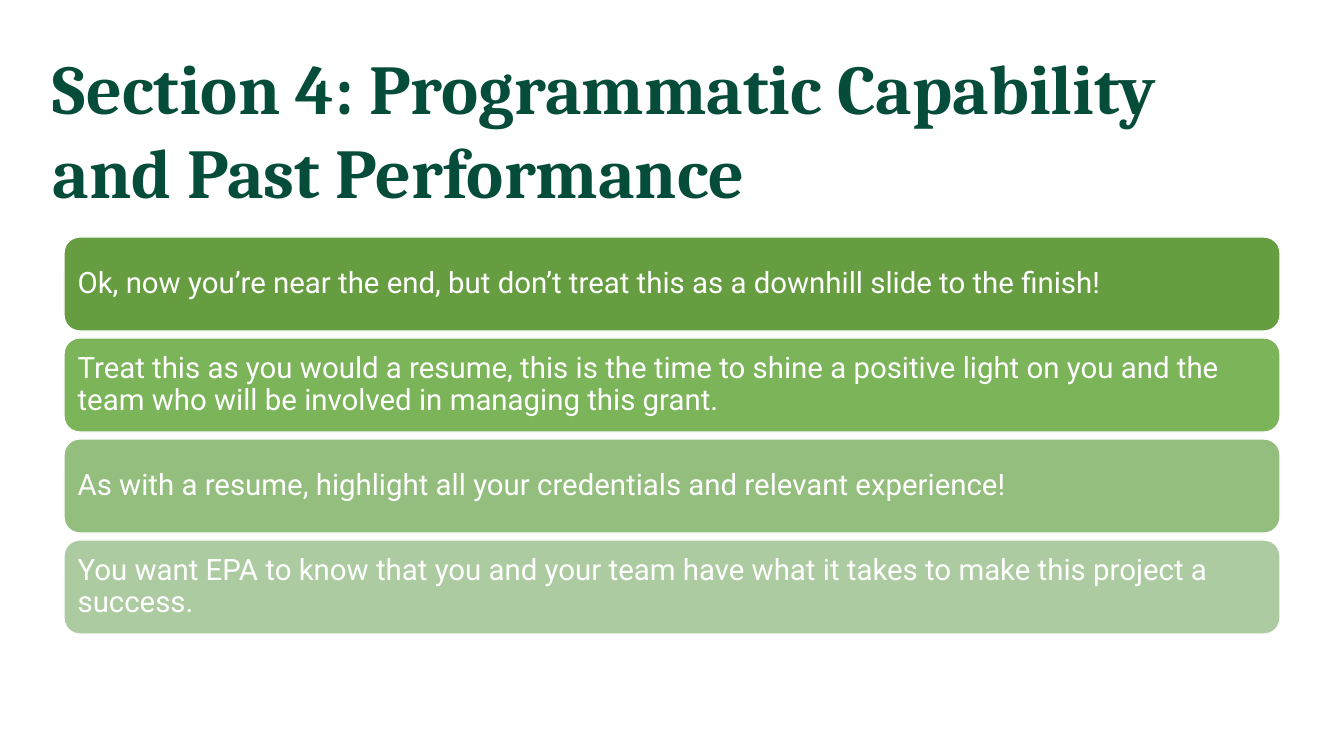
from pptx import Presentation
from pptx.dml.color import RGBColor as RGB
from pptx.enum.shapes import MSO_SHAPE as Shape
from pptx.enum.text import MSO_ANCHOR as Anchor, PP_ALIGN as Align
from pptx.util import Emu, Pt

THEME = {
    "title": {"font": "Cambria", "size": 50, "color": "054D3A", "bold": True},
    "body": {"font": "Roboto", "size": 21, "color": "FFFFFF", "bold": False},
    "edge": "FFFFFF",
    "bars": ["669D40", "7BB459", "94BE7D", "ADCBA0"],
}
TITLE = "Section 4: Programmatic Capability and Past Performance"
POINTS = [
    "Ok, now you’re near the end, but don’t treat this as a downhill slide to the finish!",
    "Treat this as you would a resume, this is the time to shine a positive light "
    "on you and the team who will be involved in managing this grant.",
    "As with a resume, highlight all your credentials and relevant experience!",
    "You want EPA to know that you and your team have what it takes to make this "
    "project a success.",
]
LEFT, TOP, WIDTH, HEIGHT, STEP, INSET = 64, 237, 1216, 94, 101, 9


def px(count):
    """Turn pixels, 100.8 to the inch, into EMU."""
    return Emu(round(count * 914400 / 100.8))


def write(frame, text, style):
    frame.word_wrap = True
    frame.text = text
    para = frame.paragraphs[0]
    para.alignment = Align.LEFT
    font = para.runs[0].font
    font.name = style["font"]
    font.size = Pt(style["size"])
    font.bold = style["bold"]
    font.color.rgb = RGB.from_string(style["color"])


deck = Presentation()
deck.slide_width, deck.slide_height = px(1344), px(756)
slide = deck.slides.add_slide(deck.slide_layouts[6])

title = slide.shapes.add_textbox(px(43), px(40), px(1257), px(179))
write(title.text_frame, TITLE, THEME["title"])

for row, (point, color) in enumerate(zip(POINTS, THEME["bars"])):
    bar = slide.shapes.add_shape(
        Shape.ROUNDED_RECTANGLE, px(LEFT), px(TOP + row * STEP), px(WIDTH), px(HEIGHT)
    )
    bar.shadow.inherit = False
    bar.fill.solid()
    bar.fill.fore_color.rgb = RGB.from_string(color)
    bar.line.color.rgb = RGB.from_string(THEME["edge"])
    bar.line.width = Pt(1)

    frame = bar.text_frame
    write(frame, point, THEME["body"])
    frame.vertical_anchor = Anchor.MIDDLE
    frame.margin_left = frame.margin_right = px(INSET)
    frame.margin_top = frame.margin_bottom = px(INSET)
    frame.paragraphs[0].line_spacing = 0.9

deck.save("out.pptx")
